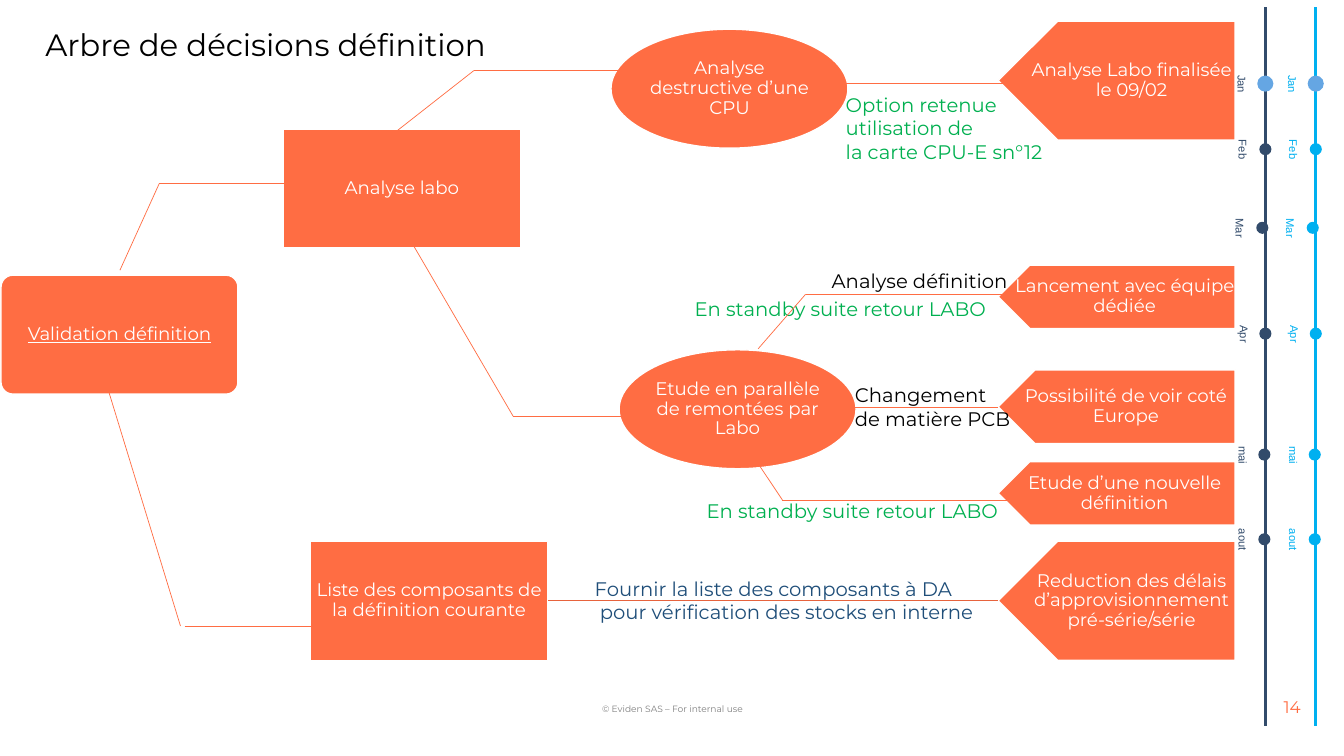
"""Build the decision tree slide with its two month timelines."""
from lxml import etree
from pptx import Presentation
from pptx.dml.color import RGBColor
from pptx.enum.shapes import MSO_CONNECTOR, MSO_SHAPE
from pptx.enum.text import MSO_ANCHOR, MSO_AUTO_SIZE, PP_ALIGN
from pptx.oxml.ns import qn
from pptx.util import Inches, Pt

LEFT, CENTER, RIGHT = PP_ALIGN.LEFT, PP_ALIGN.CENTER, PP_ALIGN.RIGHT
TOP, MIDDLE = MSO_ANCHOR.TOP, MSO_ANCHOR.MIDDLE
RECTANGLE, ROUNDED = MSO_SHAPE.RECTANGLE, MSO_SHAPE.ROUNDED_RECTANGLE
ELLIPSE, CONNECTOR_NODE = MSO_SHAPE.OVAL, MSO_SHAPE.FLOWCHART_CONNECTOR
ARROW = MSO_SHAPE.PENTAGON
STRAIGHT = MSO_CONNECTOR.STRAIGHT
FONT = "Montserrat"

COLORS = {
    "orange": "FF6D43", "rust": "E7633D", "white": "FFFFFF", "black": "000000",
    "green": "00B050", "blue": "1F4E79", "navy": "324B6B", "cyan": "00B0F0",
    "sky": "65A6E3", "grey": "808080",
}

NODE_WIDTH, NODE_HEIGHT = 2.35, 1.18
ARROW_LEFT = 9.9
NODES = [
    (ROUNDED, 0.01, 2.73, NODE_HEIGHT, "Validation définition"),
    (RECTANGLE, 2.81, 1.28, NODE_HEIGHT, "Analyse labo"),
    (RECTANGLE, 3.08, 5.37, NODE_HEIGHT, "Liste des composants de la définition courante"),
    (CONNECTOR_NODE, 6.06, 0.29, NODE_HEIGHT, "Analyse destructive d’une CPU"),
    (CONNECTOR_NODE, 6.14, 3.47, NODE_HEIGHT, "Etude en parallèle de remontées par Labo"),
    (ARROW, ARROW_LEFT, 0.21, NODE_HEIGHT, "Analyse Labo finalisée le 09/02"),
    (ARROW, ARROW_LEFT, 2.63, 0.63, "Lancement avec équipe dédiée"),
    (ARROW, ARROW_LEFT, 3.67, 0.73, "Possibilité de voir coté Europe"),
    (ARROW, ARROW_LEFT, 4.58, 0.63, "Etude d’une nouvelle définition"),
    (ARROW, ARROW_LEFT, 5.37, NODE_HEIGHT,
     "Reduction des délais d’approvisionnement pré-série/série"),
]

STANDBY = "En standby suite retour LABO"
LABELS = [
    (8.29, 0.87, 2.43, 0.81, "Option retenue\nutilisation de\nla carte CPU-E sn°12", "green"),
    (8.15, 2.62, 2.25, 0.34, "Analyse définition", "black"),
    (8.38, 3.75, 1.88, 0.57, "Changement\nde matière PCB", "black"),
    (6.91, 4.9, 4.46, 0.34, STANDBY, "green"),
    (6.79, 2.9, 4.46, 0.34, STANDBY, "green"),
]

BRANCHES = [
    [(1.19, 2.68), (1.58, 1.82), (2.9, 1.82)],
    [(1.08, 3.89), (1.79, 6.21)],
    [(1.83, 6.21), (3.2, 6.21)],
    [(4.08, 2.4), (5.09, 4.13), (6.34, 4.13)],
    [(3.91, 1.32), (4.7, 0.7), (6.24, 0.7)],
    [(8.38, 0.83), (9.98, 0.83)],
    [(8.38, 4.04), (9.9, 4.04)],
    [(7.52, 3.46), (7.99, 2.92), (10.29, 2.92)],
    [(7.52, 4.6), (7.76, 4.96), (10.29, 4.96)],
]

MONTHS = [
    ("Jan", 0, 0.83, 0.16, -0.23, "sky"),
    ("Feb", 0, 1.48, 0.12, -0.22, None),
    ("Mar", -0.03, 2.26, 0.12, -0.25, None),
    ("Apr", 0, 3.31, 0.12, -0.21, None),
    ("mai", -0.01, 4.51, 0.12, -0.22, None),
    ("aout", -0.01, 5.35, 0.12, -0.22, None),
]
TIMELINES = [(12.55, "navy"), (13.05, "cyan")]


def color(name):
    """Return the named palette colour."""
    return RGBColor.from_string(COLORS[name])


def write(shape, text, size, color_name, align=LEFT, anchor=TOP, font=FONT,
          margins=(0.1, 0.05), wrap=True):
    """Set and format the text of a shape."""
    frame = shape.text_frame
    frame.text = text
    frame.auto_size = MSO_AUTO_SIZE.NONE
    frame.word_wrap = wrap
    frame.vertical_anchor = anchor
    frame.margin_left = frame.margin_right = Inches(margins[0])
    frame.margin_top = frame.margin_bottom = Inches(margins[1])
    for paragraph in frame.paragraphs:
        paragraph.alignment = align
        for run in paragraph.runs:
            run.font.name = font
            run.font.size = Pt(size)
            run.font.color.rgb = color(color_name)
    return frame


def add_text(slide, left, top, width, height, *content, **layout):
    """Add a text box and return its text frame."""
    box = slide.shapes.add_textbox(Inches(left), Inches(top), Inches(width), Inches(height))
    return write(box, *content, **layout)


def add_filled(slide, kind, left, top, width, height, fill):
    """Add a flat filled shape without outline."""
    shape = slide.shapes.add_shape(kind, Inches(left), Inches(top), Inches(width), Inches(height))
    shape.shadow.inherit = False
    shape.fill.solid()
    shape.fill.fore_color.rgb = color(fill)
    shape.line.fill.background()
    return shape


def add_node(slide, kind, left, top, height, text):
    """Add one node of the tree with its centred text."""
    node = add_filled(slide, kind, left, top, NODE_WIDTH, height, "orange")
    node.line.color.rgb = color("white")
    node.line.width = Pt(1)
    frame = write(node, text, 13, "white", CENTER, MIDDLE, margins=(0.01, 0.01))
    frame.paragraphs[0].line_spacing = 0.9
    if kind == ROUNDED:
        node.adjustments[0] = 0.1
        frame.paragraphs[0].runs[0].font.underline = True
    if kind == ARROW:
        node.element.spPr.find(qn("a:xfrm")).set("flipH", "1")


def add_line(slide, start, end, color_name, width):
    """Add a straight line between two points."""
    points = [Inches(value) for value in (*start, *end)]
    line = slide.shapes.add_connector(STRAIGHT, *points)
    line.line.color.rgb = color(color_name)
    line.line.width = Pt(width)
    etree.SubElement(line.element.spPr, qn("a:effectLst"))


def add_timeline(slide, axis, color_name):
    """Add a vertical axis with its month dots and rotated names."""
    add_line(slide, (axis, 0.07), (axis, 7.2), color_name, 2.25)
    for name, dot_shift, middle, size, name_shift, dot_color in MONTHS:
        add_filled(slide, ELLIPSE, axis + dot_shift - size / 2, middle - size / 2,
                   size, size, dot_color or color_name)
        frame = add_text(slide, axis + name_shift - 0.1, middle - 0.06, 0.2, 0.13, name, 8,
                         color_name, align=CENTER, font="Arial", margins=(0, 0), wrap=False)
        slide.shapes[-1].rotation = 90
        frame.vertical_anchor = MIDDLE


def add_title(slide, text):
    """Place and format the title placeholder."""
    title = slide.shapes.title
    title.left, title.top = Inches(0.35), Inches(0.25)
    title.width, title.height = Inches(12.56), Inches(0.38)
    write(title, text, 22, "black", anchor=MIDDLE, margins=(0.1, 0))


def main():
    """Build and save the slide."""
    presentation = Presentation()
    presentation.slide_width, presentation.slide_height = Inches(13.33), Inches(7.5)
    slide = presentation.slides.add_slide(presentation.slide_layouts[5])
    add_title(slide, "Arbre de décisions définition")
    for node in NODES:
        add_node(slide, *node)
    add_line(slide, (5.44, 5.96), (9.9, 5.96), "rust", 1)
    for label in LABELS:
        add_text(slide, *label[:5], 14, label[5])
    stock = add_text(slide, 5.8, 5.67, 4.05, 0.57,
                     "Fournir la liste des composants à DA\npour vérification des stocks en interne",
                     14, "blue")
    stock.paragraphs[1]._p.get_or_add_pPr().set("marL", str(Inches(0.05)))
    for branch in BRANCHES:
        for start, end in zip(branch, branch[1:]):
            add_line(slide, start, end, "orange", 0.5)
    for axis, color_name in TIMELINES:
        add_timeline(slide, axis, color_name)
    add_text(slide, 5.96, 6.98, 1.42, 0.11, "© Eviden SAS – For internal use", 6.5, "grey",
             align=CENTER, anchor=MIDDLE, margins=(0, 0), wrap=False)
    add_text(slide, 12.5, 6.89, 0.5, 0.24, "14", 12, "orange", align=RIGHT, anchor=MIDDLE)
    presentation.save("out.pptx")


if __name__ == "__main__":
    main()
